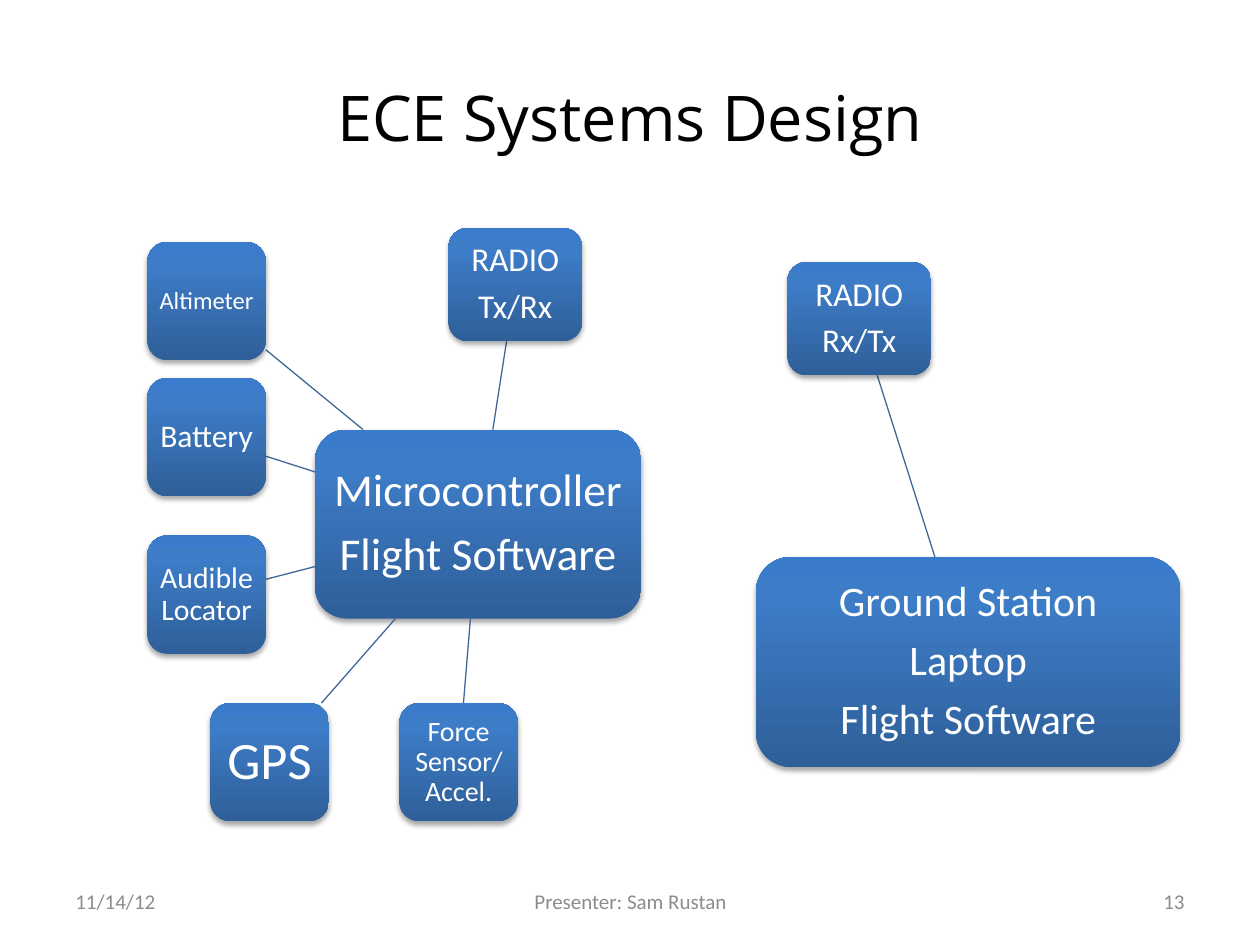
from copy import deepcopy

from lxml import etree
from pptx import Presentation
from pptx.dml.color import RGBColor
from pptx.enum import shapes, text
from pptx.oxml.ns import qn
from pptx.util import Inches, Pt

COLORS = {"title": "000000", "node_text": "FFFFFF", "footer": "8C8C8C", "link": "3F6797",
          "dark": "2F5F99", "mid": "3D7CC7", "light": "3A7CCB", "shadow": "000000"}
STOPS = [(0, "dark"), (0.8, "mid"), (1, "light")]
ALIGN = {"l": text.PP_ALIGN.LEFT, "c": text.PP_ALIGN.CENTER, "r": text.PP_ALIGN.RIGHT}

SIDE = 0.94
FLIGHT_HUB = (["Microcontroller", "Flight Software"], 26, (2.5, 3.41, 2.59, 1.5))
FLIGHT_PARTS = [
    (["RADIO", "Tx/Rx"], 19, (3.56, 1.81, 1.06, 0.9)),
    (["Altimeter"], 14, (1.17, 1.92, SIDE, SIDE)),
    (["GPS"], 30, (1.67, 5.58, SIDE, SIDE)),
    (["Force Sensor/Accel."], 16, (3.17, 5.58, SIDE, SIDE)),
    (["Audible Locator"], 17, (1.17, 4.25, SIDE, SIDE)),
    (["Battery"], 18, (1.17, 3, SIDE, SIDE)),
]
GROUND_HUB = (["Ground Station", "Laptop", "Flight Software"], 24, (6, 4.42, 3.37, 1.67))
GROUND_PARTS = [(["RADIO", "Rx/Tx"], 19, (6.25, 2.08, 1.14, 0.9))]


def rgb(name):
    """Return the named colour."""
    return RGBColor.from_string(COLORS[name])


def write(tf, lines, size, color, font="Calibri", align="c", margins=(0.1, 0.05),
          spacing=None, after=0):
    """Fill a text frame with one paragraph per line."""
    tf.word_wrap = True
    tf.vertical_anchor = text.MSO_ANCHOR.MIDDLE
    tf.margin_left = tf.margin_right = Inches(margins[0])
    tf.margin_top = tf.margin_bottom = Inches(margins[1])
    for i, line in enumerate(lines):
        p = tf.add_paragraph() if i else tf.paragraphs[0]
        p.alignment = ALIGN[align]
        p.line_spacing = spacing
        p.space_after = Pt(after)
        r = p.add_run()
        r.text = line
        r.font.size, r.font.name = Pt(size), font
        r.font.color.rgb = rgb(color)


def add_label(s, box, line, size, color, **fmt):
    """Add a text box with one line."""
    sp = s.shapes.add_textbox(*map(Inches, box))
    write(sp.text_frame, [line], size, color, **fmt)


def shade(sp):
    """Give a node its vertical gradient and soft shadow."""
    sp.fill.gradient()
    sp.fill.gradient_angle = 90
    stops = sp._element.spPr.find(".//" + qn("a:gsLst"))
    stops.append(deepcopy(stops[0]))
    for stop, (position, color) in zip(sp.fill.gradient_stops, STOPS):
        stop.position = position
        stop.color.rgb = rgb(color)
    sp.line.fill.background()
    sp.shadow.inherit = False
    effects = sp._element.spPr.find(qn("a:effectLst"))
    outer = etree.SubElement(effects, qn("a:outerShdw"), blurRad=str(Pt(3.1)),
                             dist=str(Pt(1.8)), dir="5400000", rotWithShape="0")
    color = etree.SubElement(outer, qn("a:srgbClr"), val=COLORS["shadow"])
    etree.SubElement(color, qn("a:alpha"), val="35000")


def add_node(s, lines, size, box):
    """Add a rounded node with its caption."""
    sp = s.shapes.add_shape(shapes.MSO_SHAPE.ROUNDED_RECTANGLE, *map(Inches, box))
    shade(sp)
    margin = round(size * 0.0028, 2)
    write(sp.text_frame, lines, size, "node_text", margins=(margin, margin),
          spacing=0.9, after=round(size * 0.33, 1))


def center(box):
    """Return the centre of a box."""
    x, y, w, h = box
    return x + w / 2, y + h / 2


def edge_point(box, target):
    """Return where the ray from the box centre to the target leaves the box."""
    cx, cy = center(box)
    dx, dy = target[0] - cx, target[1] - cy
    scale = 0.5 / max(abs(dx) / box[2], abs(dy) / box[3])
    return cx + dx * scale, cy + dy * scale


def add_link(s, start, end):
    """Join two boxes along the line between their centres."""
    points = edge_point(start, center(end)) + edge_point(end, center(start))
    sp = s.shapes.add_connector(shapes.MSO_CONNECTOR.STRAIGHT, *map(Inches, points))
    sp.line.color.rgb = rgb("link")
    sp.line.width = Pt(0.75)
    etree.SubElement(sp._element.spPr, qn("a:effectLst"))


def add_cluster(s, hub, parts):
    """Add a hub and the parts linked to it."""
    add_node(s, *hub)
    for part in parts:
        add_link(s, hub[2], part[2])
        add_node(s, *part)


def add_footer(s, top, height):
    """Add the date, presenter and slide number."""
    for left, width, line, align in [(0.5, 2.33, "11/14/12", "l"),
                                     (3.42, 3.17, "Presenter: Sam Rustan", "c"),
                                     (7.17, 2.33, "13", "r")]:
        add_label(s, (left, top, width, height), line, 12, "footer", align=align)


def main():
    """Build and save the slide."""
    prs = Presentation()
    prs.slide_width, prs.slide_height = Inches(10), Inches(7.5)
    s = prs.slides.add_slide(prs.slide_layouts[6])
    add_label(s, (0.5, 0.3, 9, 1.25), "ECE Systems Design", 36, "title", font="Open Sans")
    add_cluster(s, FLIGHT_HUB, FLIGHT_PARTS)
    add_cluster(s, GROUND_HUB, GROUND_PARTS)
    add_footer(s, 6.95, 0.4)
    prs.save("out.pptx")


if __name__ == "__main__":
    main()
